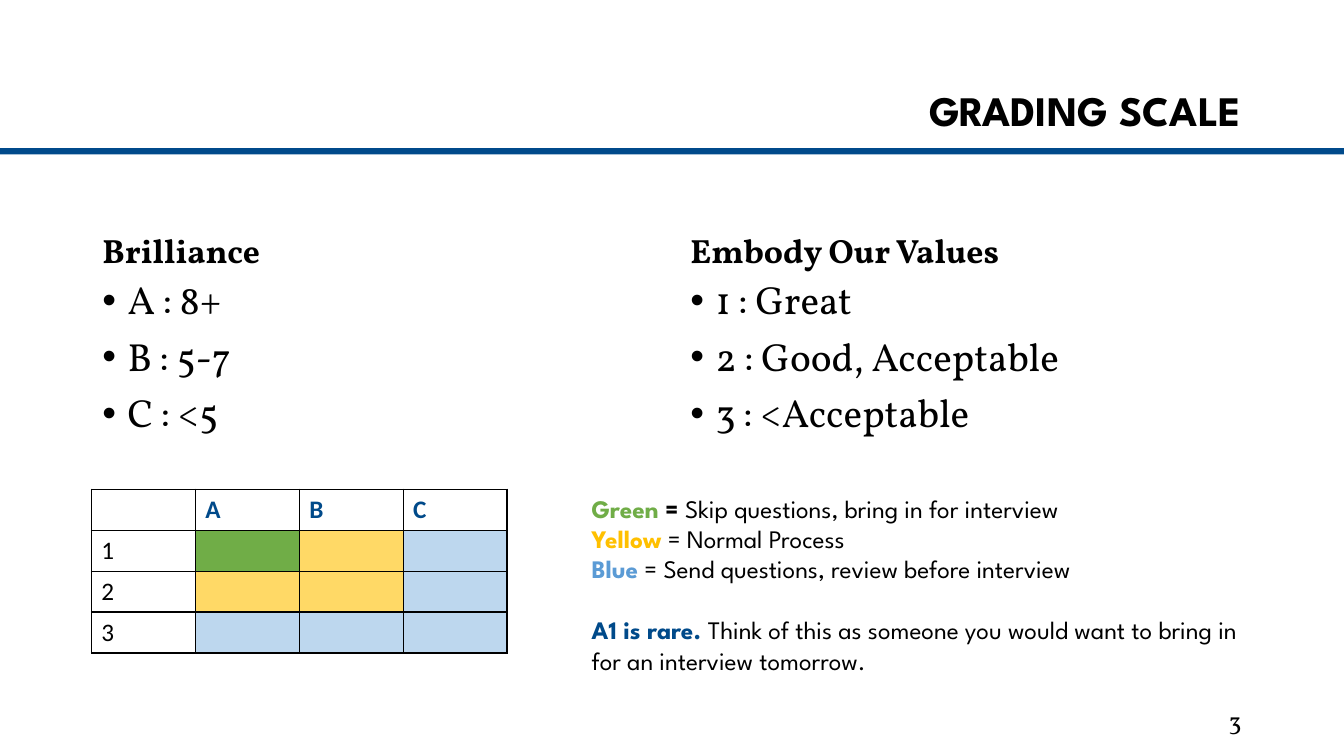
from dataclasses import dataclass

from lxml.etree import SubElement
from pptx import Presentation
from pptx.dml.color import RGBColor
from pptx.enum.shapes import MSO_SHAPE
from pptx.enum.text import MSO_ANCHOR, MSO_AUTO_SIZE, PP_ALIGN
from pptx.oxml.ns import qn
from pptx.util import Pt


@dataclass(frozen=True)
class Theme:
    black: str = "000000"
    rule: str = "004A8B"
    navy: str = "004A8A"
    green: str = "70AD47"
    gold: str = "FFC000"
    blue: str = "5B9BD5"
    sand: str = "FFD966"
    sky: str = "BDD7EE"
    sans: str = "League Spartan"
    serif: str = "Vollkorn"
    grid: str = "Calibri"
    title: int = 30
    head: int = 24
    item: int = 28
    text: int = 18


THEME = Theme()
SCALE = 9525


def px(*sizes):
    return [size * SCALE for size in sizes]


def place(shape, spot):
    shape.left, shape.top, shape.width, shape.height = px(*spot)


def add_run(para, text, face, size, color=THEME.black, bold=False):
    run = para.add_run()
    run.text = text
    font = run.font
    font.name, font.size, font.bold = face, Pt(size), bold
    font.color.rgb = RGBColor.from_string(color)


def add_box(slide, spot, anchor=MSO_ANCHOR.TOP):
    frame = slide.shapes.add_textbox(*px(*spot)).text_frame
    frame.word_wrap = True
    frame.vertical_anchor = anchor
    return frame


def next_para(frame, index):
    return frame.add_paragraph() if index else frame.paragraphs[0]


def add_title(slide, text):
    shape = slide.shapes.title
    place(shape, (88, 38, 1104, 139))
    frame = shape.text_frame
    frame.vertical_anchor = MSO_ANCHOR.MIDDLE
    frame.auto_size = MSO_AUTO_SIZE.NONE
    para = frame.paragraphs[0]
    para.alignment = PP_ALIGN.RIGHT
    para.line_spacing = 0.9
    add_run(para, text, THEME.sans, THEME.title, bold=True)


def add_rule(slide):
    bar = slide.shapes.add_shape(MSO_SHAPE.RECTANGLE, *px(0, 141, 1280, 6))
    bar.shadow.inherit = False
    bar.fill.solid()
    bar.fill.fore_color.rgb = RGBColor.from_string(THEME.rule)
    bar.line.fill.background()


def add_bullet(para):
    props = para._p.get_or_add_pPr()
    indent = 24 * SCALE
    props.set("marL", str(indent))
    props.set("indent", str(-indent))
    SubElement(props, qn("a:buFont"), typeface="Arial")
    SubElement(props, qn("a:buChar"), char="•")


def add_scale(slide, left, head, items):
    para = add_box(slide, (left, 177, 543, 86), MSO_ANCHOR.BOTTOM).paragraphs[0]
    para.line_spacing = 0.9
    add_run(para, head, THEME.serif, THEME.head, bold=True)
    frame = add_box(slide, (left, 263, 543, 184))
    for index, item in enumerate(items):
        para = next_para(frame, index)
        add_bullet(para)
        para.line_spacing = 0.9
        para.space_before = Pt(10 if index else 0)
        add_run(para, item, THEME.serif, THEME.item)


def add_edges(cell):
    props = cell._tc.get_or_add_tcPr()
    for side in ("lnL", "lnR", "lnT", "lnB"):
        line = SubElement(props, qn(f"a:{side}"), w=str(Pt(1)))
        fill = SubElement(line, qn("a:solidFill"))
        SubElement(fill, qn("a:srgbClr"), val=THEME.black)


def add_cell(cell, text, color, bold, fill):
    add_edges(cell)
    if fill:
        cell.fill.solid()
        cell.fill.fore_color.rgb = RGBColor.from_string(fill)
    else:
        cell.fill.background()
    if text:
        para = cell.text_frame.paragraphs[0]
        add_run(para, text, THEME.grid, THEME.text, color, bold)


def add_grid(slide, heads, grades):
    rows, cols = len(grades) + 1, len(heads) + 1
    spot = px(87, 466, 99 * cols, 39 * rows)
    table = slide.shapes.add_table(rows, cols, *spot).table
    table.first_row = table.horz_banding = False
    for col, head in enumerate(["", *heads]):
        add_cell(table.cell(0, col), head, THEME.navy, True, None)
    for row, (name, fills) in enumerate(grades.items(), 1):
        add_cell(table.cell(row, 0), name, THEME.black, False, None)
        for col, fill in enumerate(fills, 1):
            add_cell(table.cell(row, col), "", THEME.black, False, fill)


def add_key(slide, lines):
    frame = add_box(slide, (554, 465, 657, 184))
    for index, (gap, runs) in enumerate(lines):
        para = next_para(frame, index)
        para.space_before = Pt(gap)
        for text, color, bold in runs:
            add_run(para, text, THEME.sans, THEME.text, color, bold)


def add_number(slide, text):
    para = add_box(slide, (904, 667, 288, 38), MSO_ANCHOR.MIDDLE).paragraphs[0]
    para.alignment = PP_ALIGN.RIGHT
    add_run(para, text, THEME.serif, THEME.text)


def main():
    deck = Presentation()
    deck.slide_width, deck.slide_height = px(1280, 720)
    slide = deck.slides.add_slide(deck.slide_layouts[5])
    add_rule(slide)
    add_title(slide, "GRADING SCALE")
    add_scale(slide, 88, "Brilliance", ["A : 8+", "B : 5-7", "C : <5"])
    add_scale(slide, 648, "Embody Our Values",
              ["1 : Great", "2 : Good, Acceptable", "3 : <Acceptable"])
    add_number(slide, "3")
    black = THEME.black
    add_key(slide, [
        (0, [("Green", THEME.green, True), (" = ", black, True),
             ("Skip questions, bring in for interview", black, False)]),
        (0, [("Yellow", THEME.gold, True),
             (" = Normal Process", black, False)]),
        (0, [("Blue", THEME.blue, True),
             (" = Send questions, review before interview", black, False)]),
        (22, [("A1 is rare. ", THEME.navy, True),
              ("Think of this as someone you would want to bring in "
               "for an interview tomorrow.", black, False)]),
    ])
    green, sand, sky = THEME.green, THEME.sand, THEME.sky
    add_grid(slide, "ABC", {
        "1": (green, sand, sky),
        "2": (sand, sand, sky),
        "3": (sky, sky, sky),
    })
    deck.save("out.pptx")


if __name__ == "__main__":
    main()
